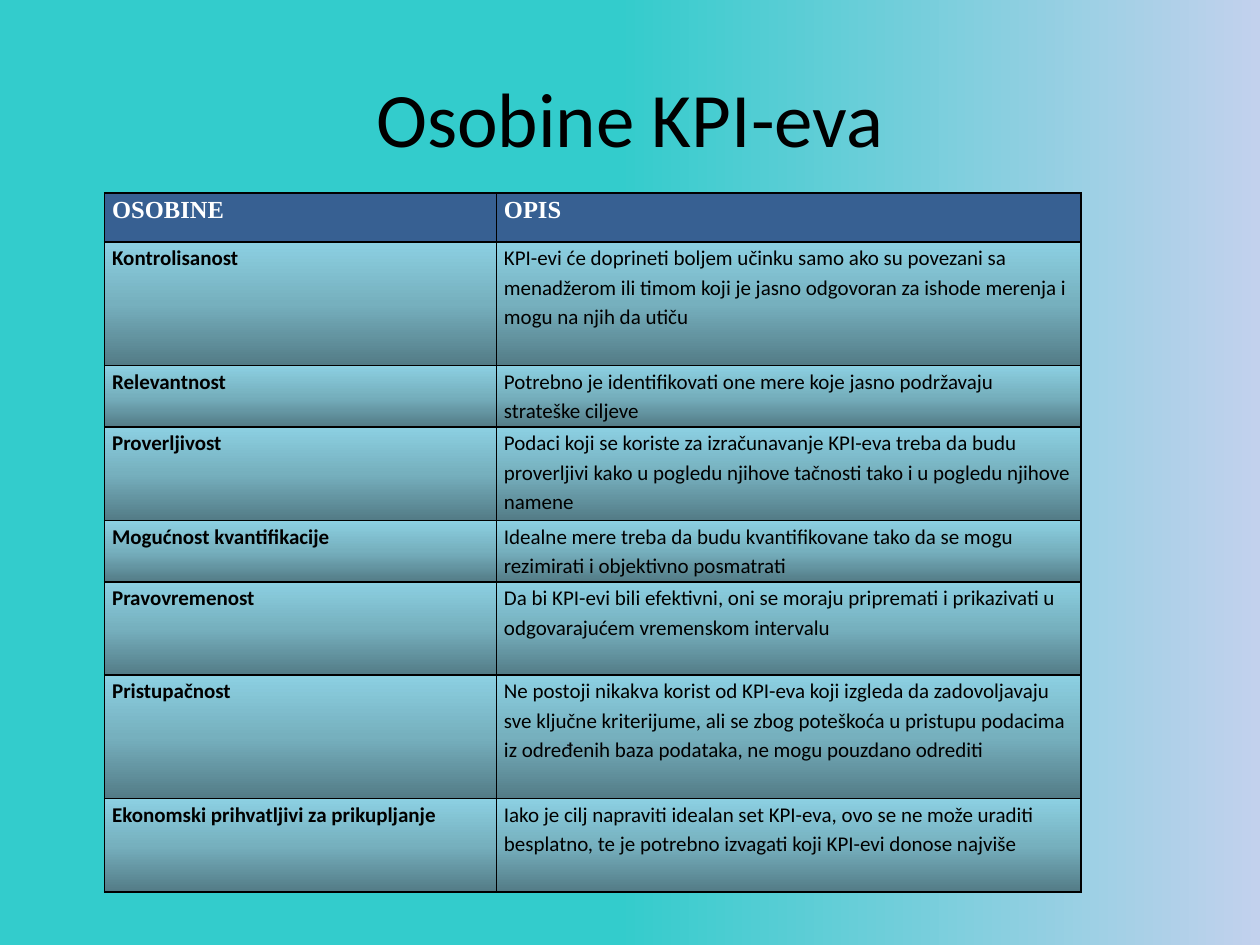
from pptx import Presentation
from pptx import util as u
from pptx.dml.color import RGBColor
from pptx.enum import text
from pptx.oxml import parse_xml
from pptx.oxml.ns import nsdecls

COLORS = {
    "black": "000000", "white": "FFFFFF", "head": "376092",
    "teal": "33CCCC", "lilac": "C2D1ED", "pale": "E1E8F5",
    "dark": "537B86", "mid": "76B0BE", "light": "8CD0E2",
}


def blend(stops, angle):
    """Return a linear gradient fill; stops are (percent, colour name)."""
    marks = "".join(
        f'<a:gs pos="{pos * 1000}"><a:srgbClr val="{COLORS[name]}"/></a:gs>'
        for pos, name in stops)
    return parse_xml(
        f'<a:gradFill {nsdecls("a")} rotWithShape="1"><a:gsLst>{marks}</a:gsLst>'
        f'<a:lin ang="{angle * 60000}" scaled="0"/></a:gradFill>')


def add_run(para, words, font, size, color, bold=False):
    run = para.add_run()
    run.text = words
    run.font.name = font
    run.font.size = u.Pt(size)
    run.font.bold = bold
    run.font.color.rgb = RGBColor.from_string(COLORS[color])


rows = [
    ("OSOBINE", "OPIS", 0.39),
    ("Kontrolisanost",
     "KPI-evi će doprineti boljem učinku samo ako su povezani sa menadžerom "
     "ili timom koji je jasno odgovoran za ishode merenja i mogu na njih da utiču", 0.98),
    ("Relevantnost",
     "Potrebno je identifikovati one mere koje jasno podržavaju strateške ciljeve", 0.49),
    ("Proverljivost",
     "Podaci koji se koriste za izračunavanje KPI-eva treba da budu proverljivi "
     "kako u pogledu njihove tačnosti tako i u pogledu njihove namene", 0.74),
    ("Mogućnost kvantifikacije",
     "Idealne mere treba da budu kvantifikovane tako da se mogu rezimirati "
     "i objektivno posmatrati", 0.49),
    ("Pravovremenost",
     "Da bi KPI-evi bili efektivni, oni se moraju pripremati i prikazivati "
     "u odgovarajućem vremenskom intervalu", 0.74),
    ("Pristupačnost",
     "Ne postoji nikakva korist od KPI-eva koji izgleda da zadovoljavaju sve "
     "ključne kriterijume, ali se zbog poteškoća u pristupu podacima iz određenih "
     "baza podataka, ne mogu pouzdano odrediti", 0.98),
    ("Ekonomski prihvatljivi za prikupljanje",
     "Iako je cilj napraviti idealan set KPI-eva, ovo se ne može uraditi besplatno, "
     "te je potrebno izvagati koji KPI-evi donose najviše", 0.74),
]
widths = [3.11, 4.64]

prs = Presentation()
prs.slide_width, prs.slide_height = u.Inches(10), u.Inches(7.5)
slide = prs.slides.add_slide(prs.slide_layouts[5])

# Background
slide.background.fill.solid()
back = slide.element.xpath(".//p:bgPr")[0]
back.replace(back[0], blend([(49, "teal"), (100, "lilac"), (100, "pale")], 0))

# Title
title = slide.shapes.title
title.left, title.top = u.Inches(0.5), u.Inches(0.3)
title.width, title.height = u.Inches(9), u.Inches(1.25)
title.text_frame.vertical_anchor = text.MSO_ANCHOR.MIDDLE
para = title.text_frame.paragraphs[0]
para.alignment = text.PP_ALIGN.CENTER
add_run(para, "Osobine KPI-eva", "Calibri", 44, "black")

# Table of traits
table = slide.shapes.add_table(
    len(rows), len(widths), u.Inches(0.83), u.Inches(1.53),
    u.Inches(sum(widths)), u.Inches(sum(row[-1] for row in rows))).table
table.first_row = table.horz_banding = False
for col, width in zip(table.columns, widths):
    col.width = u.Inches(width)

for r, (*words, height) in enumerate(rows):
    table.rows[r].height = u.Inches(height)
    for c, word in enumerate(words):
        cell = table.cell(r, c)
        cell.margin_left = cell.margin_right = u.Inches(0.06)
        cell.margin_top = cell.margin_bottom = 0
        props = cell._tc.get_or_add_tcPr()
        for side in "LRTB":
            props.append(parse_xml(
                f'<a:ln{side} {nsdecls("a")} w="12700"><a:solidFill>'
                f'<a:srgbClr val="{COLORS["black"]}"/></a:solidFill></a:ln{side}>'))
        para = cell.text_frame.paragraphs[0]
        para.line_spacing = 1.15
        if r == 0:
            cell.fill.solid()
            cell.fill.fore_color.rgb = RGBColor.from_string(COLORS["head"])
            add_run(para, word, "Times New Roman", 14, "white", True)
        else:
            props.append(blend([(0, "dark"), (50, "mid"), (100, "light")], 270))
            para.space_after = u.Pt(10)
            add_run(para, word, "Calibri", 12, "black", c == 0)

prs.save("out.pptx")
